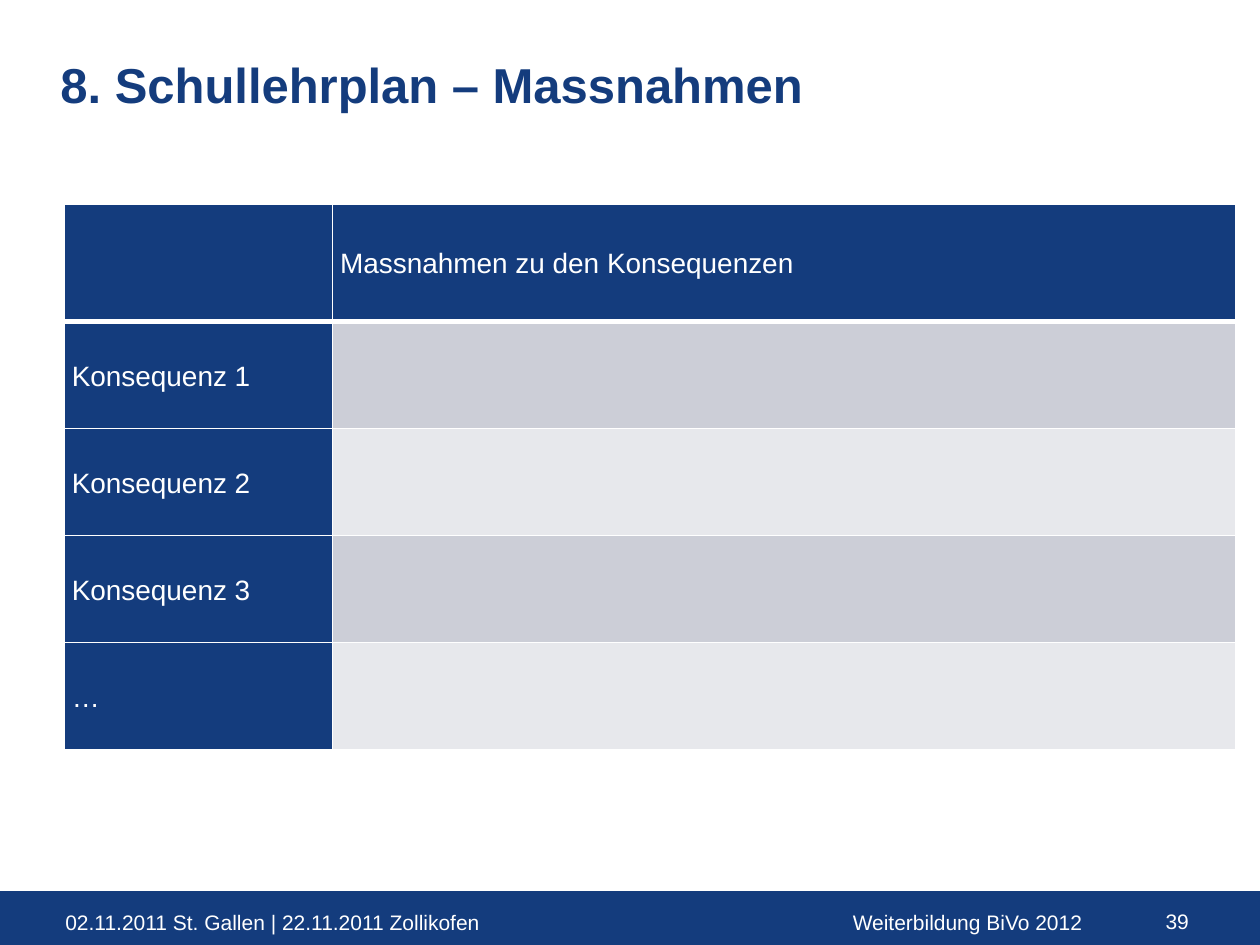
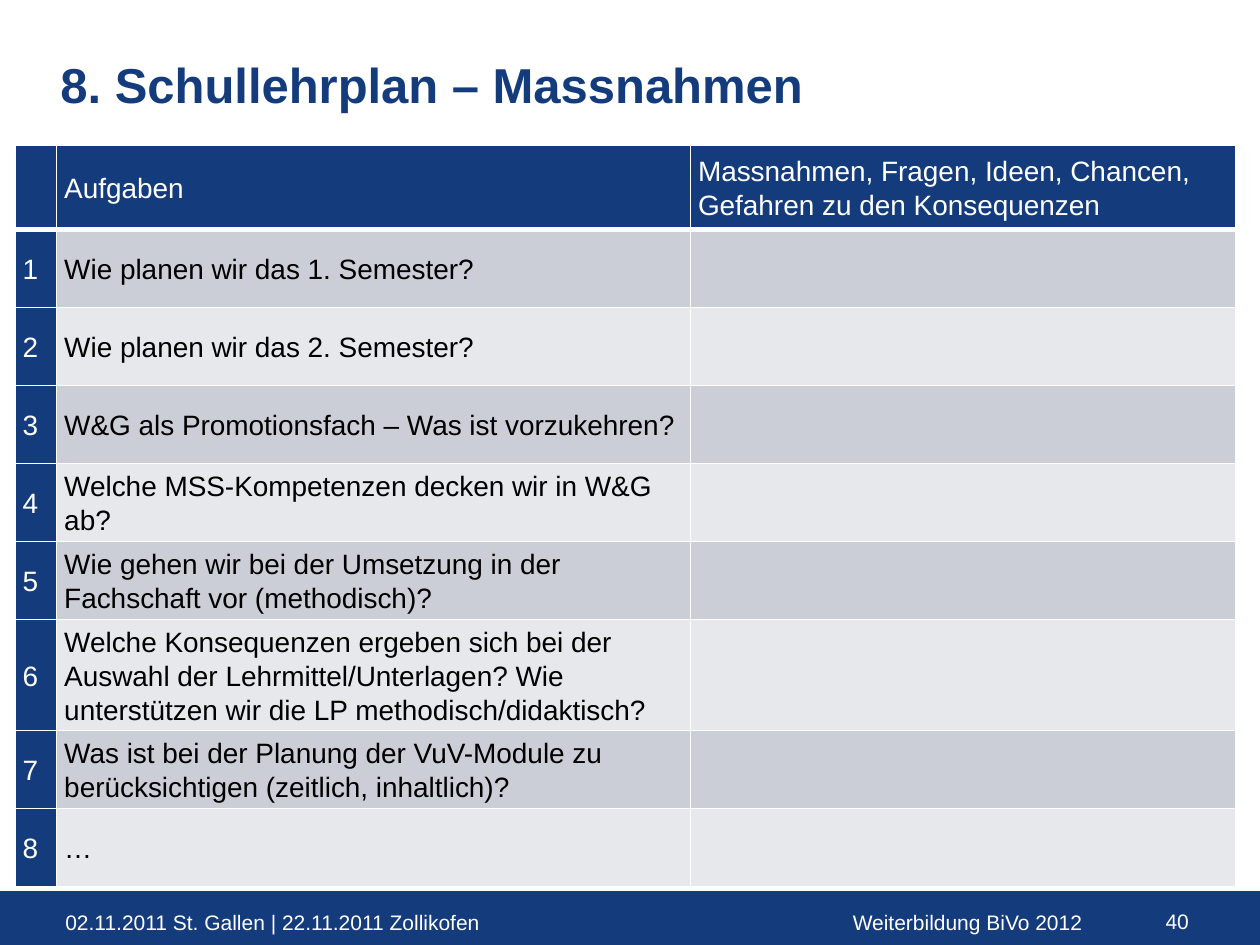
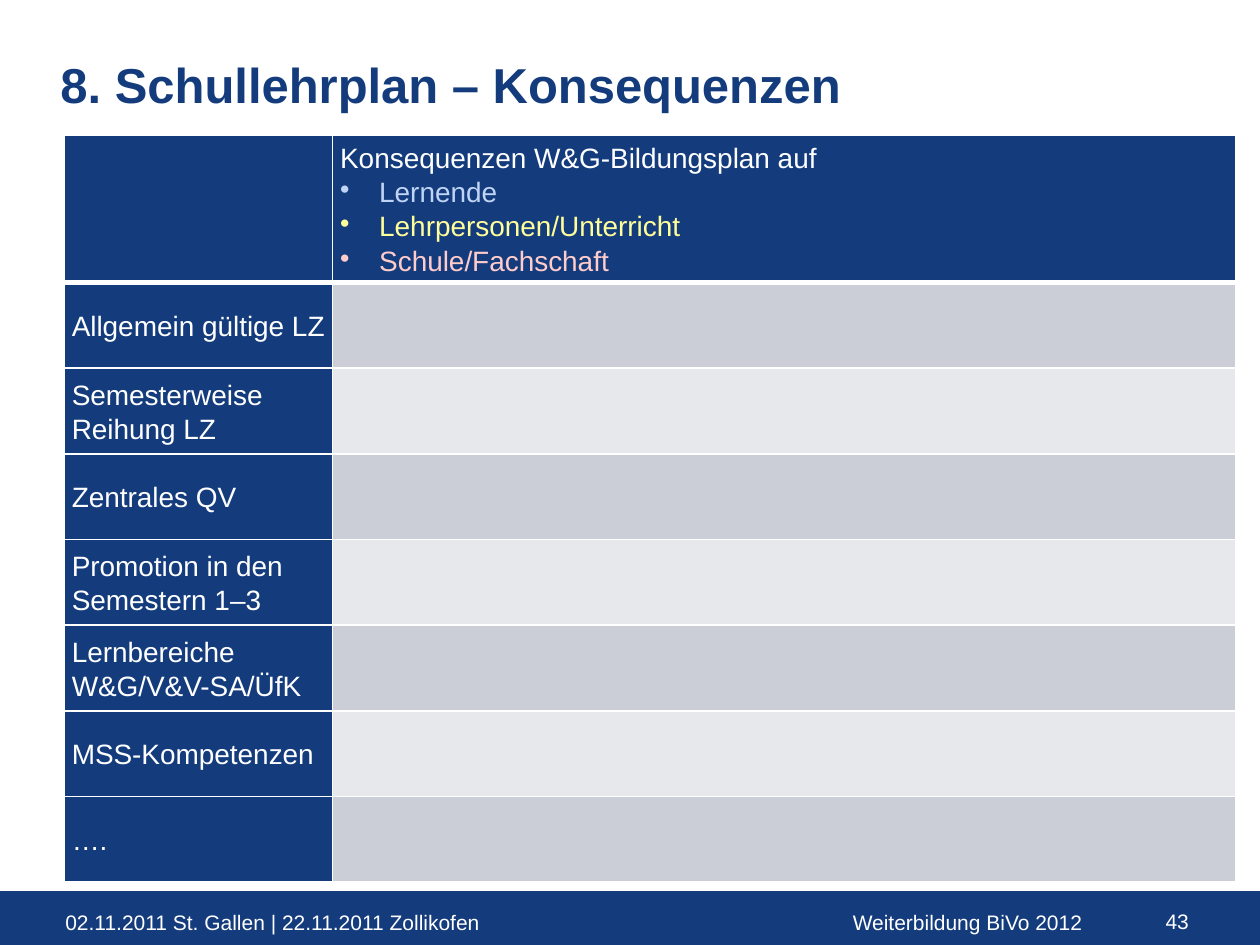
from dataclasses import dataclass

from lxml.etree import SubElement
from pptx import Presentation
from pptx.dml.color import RGBColor
from pptx.enum.shapes import MSO_SHAPE
from pptx.enum.text import MSO_ANCHOR, MSO_AUTO_SIZE, PP_ALIGN
from pptx.oxml.ns import qn
from pptx.util import Inches, Pt


@dataclass(frozen=True)
class Theme:
    font: str = "Arial"
    navy: str = "143C7D"
    white: str = "FFFFFF"
    black: str = "000000"
    bands: tuple = ("CCCED7", "E7E8EC")
    title_size: int = 28
    table_size: int = 16
    footer_size: int = 12


THEME = Theme()
SLIDE_W, SLIDE_H = 10, 7.5
TITLE_LEFT, TITLE_TOP, TITLE_H = 0.38, 0.38, 0.93
FOOTER_TOP = 7.08

PLACE_AND_DATE = "02.11.2011 St. Gallen | 22.11.2011 Zollikofen"
EVENT = "Weiterbildung BiVo 2012"

# A header cell is a text or a list of (text, colour); lines after the first are bullets.
IMPACT_HEADER = [
    ("Konsequenzen W&G-Bildungsplan auf", THEME.white),
    ("Lernende", "C0D4F5"),
    ("Lehrpersonen/Unterricht", "FFFF99"),
    ("Schule/Fachschaft", "FFCCCC"),
]
TASKS = [
    "Wie planen wir das 1. Semester?",
    "Wie planen wir das 2. Semester?",
    "W&G als Promotionsfach – Was ist vorzukehren?",
    "Welche MSS-Kompetenzen decken wir in W&G ab?",
    "Wie gehen wir bei der Umsetzung in der Fachschaft vor (methodisch)?",
    "Welche Konsequenzen ergeben sich bei der Auswahl der Lehrmittel/Unterlagen? "
    "Wie unterstützen wir die LP methodisch/didaktisch?",
    "Was ist bei der Planung der VuV-Module zu berücksichtigen (zeitlich, inhaltlich)?",
    "…",
]
TOPICS = [
    "Allgemein gültige LZ",
    "Semesterweise Reihung LZ",
    "Zentrales QV",
    "Promotion in den Semestern 1–3",
    "Lernbereiche W&G/V&V-SA/ÜfK",
    "MSS-Kompetenzen",
    "….",
]
SLIDES = [
    dict(
        title="8. Schullehrplan – Massnahmen", title_width=7.7, page=39,
        corner=(0.51, 1.62), columns=(2.13, 7.17), header_height=0.93, row_height=0.85,
        rows=[("", "Massnahmen zu den Konsequenzen")]
        + [(label, "") for label in ("Konsequenz 1", "Konsequenz 2", "Konsequenz 3", "…")],
    ),
    dict(
        title="8. Schullehrplan – Massnahmen", title_width=7.7, page=40,
        corner=(0.12, 1.15), columns=(0.33, 5.03, 4.33), header_height=0.67, row_height=0.62,
        rows=[("", "Aufgaben", "Massnahmen, Fragen, Ideen, Chancen, Gefahren zu den Konsequenzen")]
        + [(str(number), task, "") for number, task in enumerate(TASKS, 1)],
    ),
    dict(
        title="8. Schullehrplan – Konsequenzen", title_width=7.3, page=43,
        corner=(0.51, 1.07), columns=(2.13, 7.17), header_height=1.12, row_height=0.68,
        rows=[("", IMPACT_HEADER)] + [(topic, "") for topic in TOPICS],
    ),
]


def set_all(target, **values):
    for name, value in values.items():
        setattr(target, name, value)


def inches(*lengths):
    return [Inches(length) for length in lengths]


def style_text(paragraph, size, colour, bold=False):
    set_all(paragraph.font, name=THEME.font, size=Pt(size), bold=bold)
    paragraph.font.color.rgb = RGBColor.from_string(colour)


def paint(fill, colour):
    fill.solid()
    fill.fore_color.rgb = RGBColor.from_string(colour)


def add_title(slide, text, width):
    title = slide.shapes.title
    left, top, width, height = inches(TITLE_LEFT, TITLE_TOP, width, TITLE_H)
    set_all(title, left=left, top=top, width=width, height=height)
    frame = title.text_frame
    frame.text = text
    set_all(frame, word_wrap=True, auto_size=MSO_AUTO_SIZE.NONE, vertical_anchor=MSO_ANCHOR.TOP)
    frame.paragraphs[0].alignment = PP_ALIGN.LEFT
    style_text(frame.paragraphs[0], THEME.title_size, THEME.navy, bold=True)


def add_footer(slide, page):
    band = slide.shapes.add_shape(
        MSO_SHAPE.RECTANGLE, *inches(-0.04, FOOTER_TOP, SLIDE_W + 0.04, SLIDE_H - FOOTER_TOP))
    band.shadow.inherit = False
    paint(band.fill, THEME.navy)
    paint(band.line.fill, THEME.navy)
    band.line.width = Pt(0.75)
    for text, box, alignment in (
        (PLACE_AND_DATE, (0.42, 7.17, 4.74, 0.32), PP_ALIGN.LEFT),
        (EVENT, (6.67, 7.17, 2.33, 0.33), PP_ALIGN.LEFT),
        (f"{page} ", (9, 7.16, 0.58, 0.34), PP_ALIGN.RIGHT),
    ):
        frame = slide.shapes.add_textbox(*inches(*box)).text_frame
        frame.word_wrap = True
        frame.text = text
        frame.paragraphs[0].alignment = alignment
        style_text(frame.paragraphs[0], THEME.footer_size, THEME.white)


def add_borders(cell, bottom):
    properties = cell._tc.get_or_add_tcPr()
    for side, points in (("L", 1), ("R", 1), ("T", 1), ("B", bottom)):
        line = SubElement(properties, qn(f"a:ln{side}"), w=str(Pt(points)))
        fill = SubElement(line, qn("a:solidFill"))
        SubElement(fill, qn("a:srgbClr"), val=THEME.white)


def add_bullet(paragraph):
    properties = paragraph._p.get_or_add_pPr()
    indent = Inches(0.31)
    properties.set("marL", str(indent))
    properties.set("indent", str(-indent))
    SubElement(properties, qn("a:buChar"), char="•")


def fill_cell(cell, content, background, colour, bottom):
    add_borders(cell, bottom)
    paint(cell.fill, background)
    set_all(cell, vertical_anchor=MSO_ANCHOR.MIDDLE, margin_left=Inches(0.06),
            margin_right=Inches(0.06), margin_top=0, margin_bottom=0)
    lines = [(content, colour)] if isinstance(content, str) else content
    frame = cell.text_frame
    for position, (text, line_colour) in enumerate(lines):
        paragraph = frame.add_paragraph() if position else frame.paragraphs[0]
        paragraph.text = text
        if position:
            add_bullet(paragraph)
        paragraph.line_spacing = 1.1
        style_text(paragraph, THEME.table_size, line_colour)


def add_grid(slide, corner, columns, header_height, row_height, rows):
    heights = [header_height] + [row_height] * (len(rows) - 1)
    grid = slide.shapes.add_table(
        len(rows), len(columns), *inches(*corner, sum(columns), sum(heights))).table
    grid.horz_banding = False
    for column, width in zip(grid.columns, columns):
        column.width = Inches(width)
    for r, (cells, height) in enumerate(zip(rows, heights)):
        grid.rows[r].height = Inches(height)
        for c, content in enumerate(cells):
            heading = r == 0 or c == 0
            background = THEME.navy if heading else THEME.bands[(r - 1) % 2]
            colour = THEME.white if heading else THEME.black
            fill_cell(grid.cell(r, c), content, background, colour, bottom=1 if r else 3)


def main():
    deck = Presentation()
    set_all(deck, slide_width=Inches(SLIDE_W), slide_height=Inches(SLIDE_H))
    title_only = deck.slide_layouts[5]
    for content in SLIDES:
        slide = deck.slides.add_slide(title_only)
        add_footer(slide, content["page"])
        add_title(slide, content["title"], content["title_width"])
        add_grid(slide, *(content[part] for part in (
            "corner", "columns", "header_height", "row_height", "rows")))
    deck.save("out.pptx")


if __name__ == "__main__":
    main()
